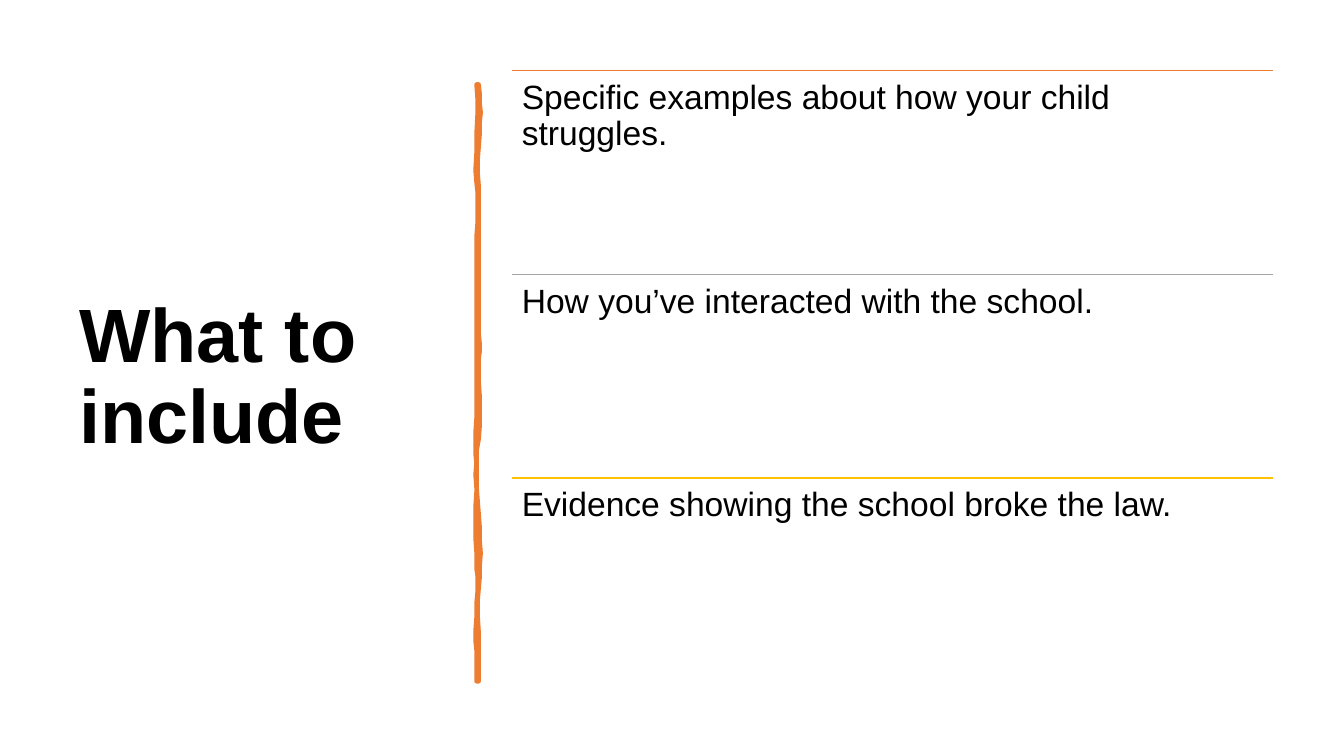
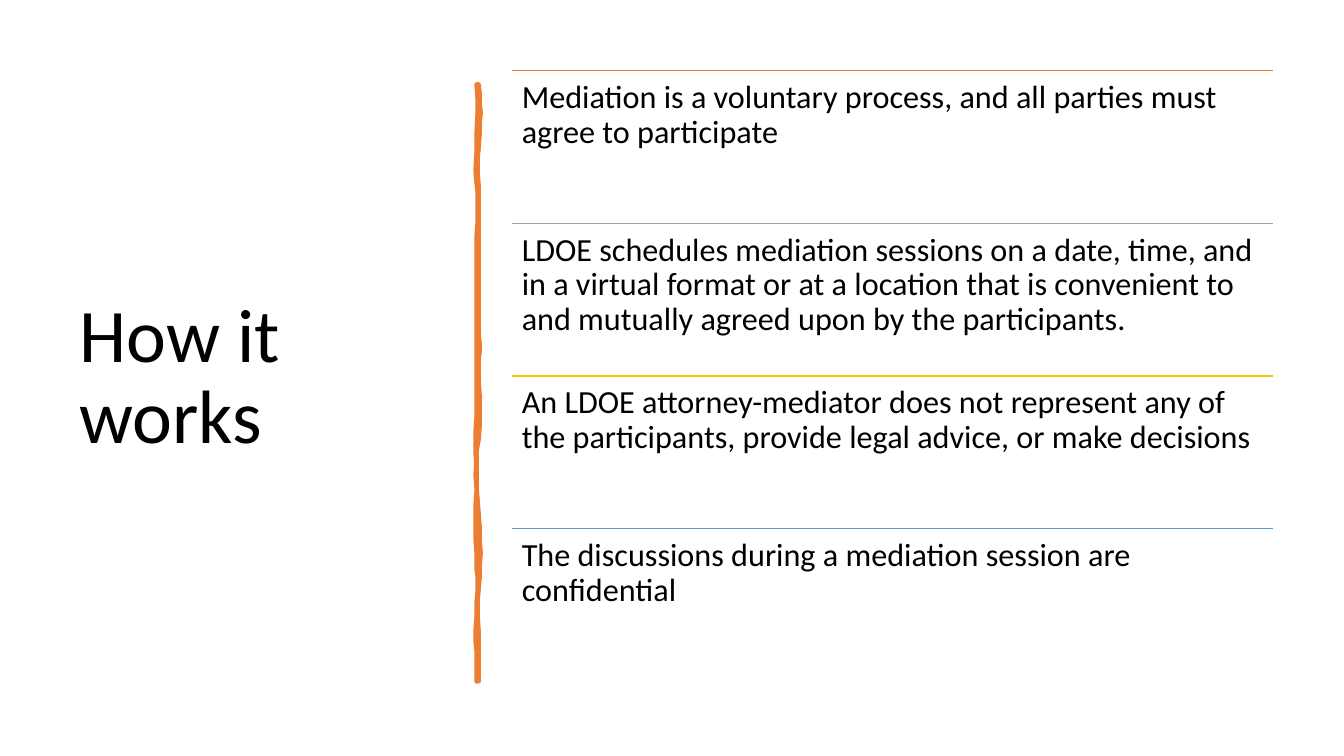
import pptx
import pptx.dml.color
import pptx.enum.shapes
import pptx.enum.text
import pptx.oxml
import pptx.oxml.ns
import pptx.util

Cm, Pt = pptx.util.Cm, pptx.util.Pt
RGB = pptx.dml.color.RGBColor
BLACK = RGB(0x00, 0x00, 0x00)
ORANGE = RGB(0xED, 0x7D, 0x31)
GREY = RGB(0xA5, 0xA5, 0xA5)
GOLD = RGB(0xFF, 0xC0, 0x00)
BLUE = RGB(0x5B, 0x9B, 0xD5)
RULES = (ORANGE, GREY, GOLD, BLUE)

# Boxes: left, top, width, height in cm
TITLE = (1.75, 1.78, 9.5, 15.52)
BRUSH = (12.01, 2.13)
LIST = (12.9, 1.78, 19.18, 15.39)

# Brush outline: Bezier curves as two controls and an end, in hundredths
# of an inch from the top left corner of the brush
UNIT = Cm(0.0254)
START = (2, 0)
CURVES = (
    # Right edge, downwards
    (4, 18, 4, 35, 2, 62), (0, 89, 3, 111, 2, 142),
    (1, 173, 2, 178, 2, 210), (1, 241, 4, 258, 2, 272),
    (0, 286, 6, 330, 2, 352), (-2, 373, -1, 400, 2, 426),
    (4, 452, 4, 480, 2, 500), (0, 519, 3, 566, 2, 592),
    # Left edge, upwards
    (1, 592, 0, 592, 0, 592), (1, 562, -2, 560, 0, 529),
    (1, 499, 1, 486, 0, 473), (-1, 460, -1, 411, 0, 393),
    (0, 375, -2, 361, 0, 331), (1, 302, -1, 289, 0, 251),
    (1, 214, -1, 197, 0, 166), (1, 134, 2, 116, 0, 97),
    (-3, 79, 4, 20, 0, 0),
)

SLIDES = (
    ("What to include", "Arial", True, 24, (
        "Specific examples about how your child struggles.",
        "How you’ve interacted with the school.",
        "Evidence showing the school broke the law.",
    )),
    ("How it works", "Calibri", False, 23, (
        "Mediation is a voluntary process, and all parties must agree "
        "to participate",
        "LDOE schedules mediation sessions on a date, time, and in a "
        "virtual format or at a location that is convenient to and "
        "mutually agreed upon by the participants.",
        "An LDOE attorney-mediator does not represent any of the "
        "participants, provide legal advice, or make decisions",
        "The discussions during a mediation session are confidential",
    )),
)


def write(shape, text, font, size, bold=False, anchor="TOP"):
    frame = shape.text_frame
    frame.text = text
    frame.word_wrap = True
    frame.auto_size = pptx.enum.text.MSO_AUTO_SIZE.NONE
    frame.vertical_anchor = getattr(pptx.enum.text.MSO_ANCHOR, anchor)
    frame.margin_left = frame.margin_right = Cm(0.25)
    frame.margin_top = frame.margin_bottom = Cm(0.25)
    para = frame.paragraphs[0]
    para.alignment = pptx.enum.text.PP_ALIGN.LEFT
    para.line_spacing = 0.9
    para.font.name = font
    para.font.size = Pt(size)
    para.font.bold = bold
    para.font.color.rgb = BLACK


def add_title(slide, box, text, font, bold):
    title = slide.shapes.title
    title.left, title.top, title.width, title.height = map(Cm, box)
    write(title, text, font, 54, bold=bold, anchor="MIDDLE")


def trace(start, curves, steps=6):
    """Points along a chain of Bezier curves."""
    x, y = start
    points = []
    for ax, ay, bx, by, ex, ey in curves:
        for step in range(1, steps + 1):
            t = step / steps
            u = 1 - t
            points.append(tuple(
                u**3 * p + 3 * u * u * t * a + 3 * u * t * t * b + t**3 * e
                for p, a, b, e in ((x, ax, bx, ex), (y, ay, by, ey))))
        x, y = ex, ey
    return points


def add_brush(slide, left, top):
    path = slide.shapes.build_freeform(*START, scale=UNIT)
    path.add_line_segments(trace(START, CURVES), close=True)
    brush = path.convert_to_shape(Cm(left), Cm(top))
    brush.shadow.inherit = False
    brush.fill.solid()
    brush.fill.fore_color.rgb = ORANGE
    brush.line.color.rgb = ORANGE
    brush.line.width = Pt(3.25)
    # Round joins keep the ends soft
    brush.line._get_or_add_ln().append(pptx.oxml.parse_xml(
        "<a:round %s/>" % pptx.oxml.ns.nsdecls("a")))


def add_rule(slide, left, top, width, color):
    rule = slide.shapes.add_connector(
        pptx.enum.shapes.MSO_CONNECTOR.STRAIGHT,
        Cm(left), Cm(top), Cm(left + width), Cm(top))
    rule.line.color.rgb = color
    rule.line.width = Pt(1)
    rule._element.spPr.append(pptx.oxml.parse_xml(
        "<a:effectLst %s/>" % pptx.oxml.ns.nsdecls("a")))


def add_list(slide, box, items, font, size):
    left, top, width, height = box
    row = height / len(items)
    for i, (item, color) in enumerate(zip(items, RULES)):
        y = top + i * row
        add_rule(slide, left, y, width, color)
        cell = slide.shapes.add_textbox(Cm(left), Cm(y), Cm(width), Cm(row))
        write(cell, item, font, size)


def main():
    deck = pptx.Presentation()
    deck.slide_width, deck.slide_height = Cm(33.87), Cm(19.05)
    for title, font, bold, size, items in SLIDES:
        slide = deck.slides.add_slide(deck.slide_layouts[5])
        add_title(slide, TITLE, title, font, bold)
        add_brush(slide, *BRUSH)
        add_list(slide, LIST, items, font, size)
    deck.save("out.pptx")


if __name__ == "__main__":
    main()
